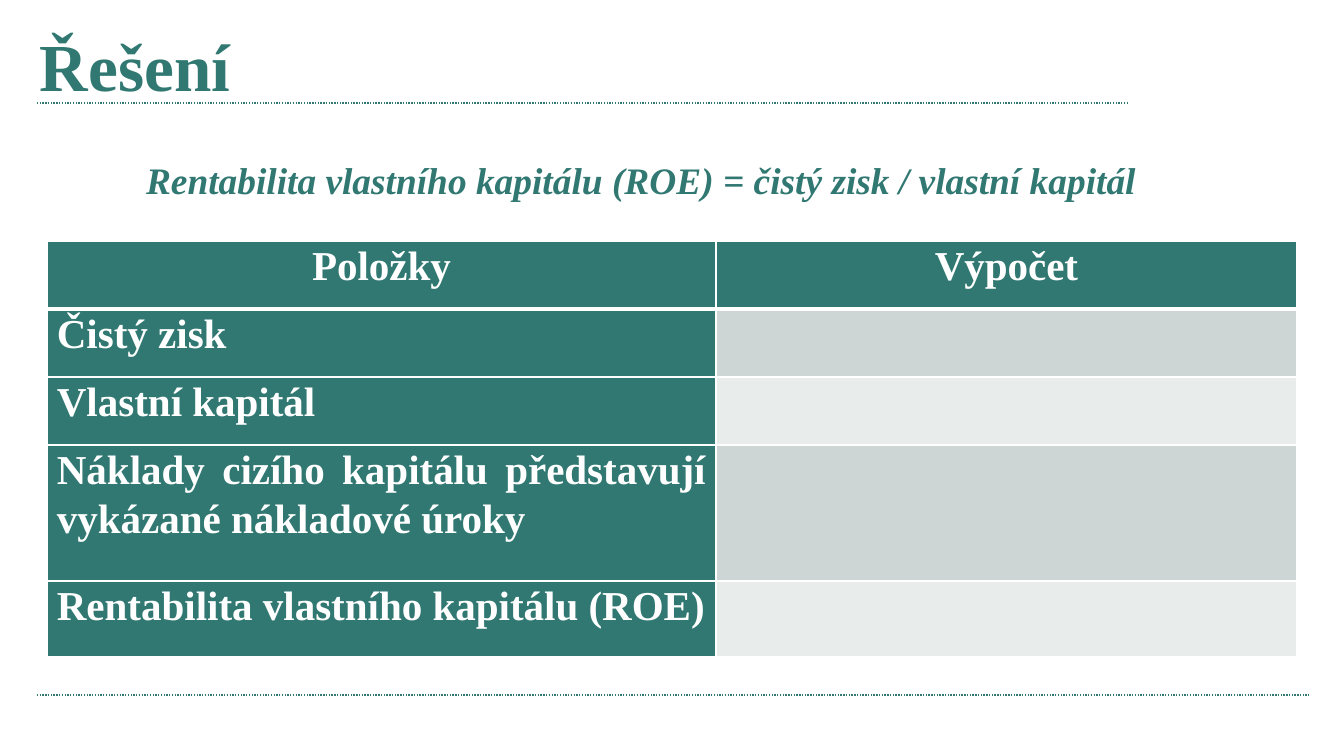
from collections import namedtuple
from dataclasses import dataclass

from lxml.etree import SubElement
from pptx import Presentation
from pptx.dml.color import RGBColor
from pptx.enum.dml import MSO_LINE
from pptx.enum.shapes import MSO_CONNECTOR
from pptx.enum.text import PP_ALIGN
from pptx.oxml.ns import qn
from pptx.util import Emu, Pt

Box = namedtuple("Box", "left top width height")


@dataclass(frozen=True)
class Theme:
    """Colours, font and type sizes of the slide."""
    teal: str = "307871"
    white: str = "FFFFFF"
    bands: tuple = ("CDD6D5", "E8ECEB")
    font: str = "Times New Roman"
    title: int = 36
    formula: int = 20
    table: int = 22
    rule: float = 0.75


THEME = Theme()
HEADER = ("Položky", "Výpočet")
ITEMS = (
    "Čistý zisk",
    "Vlastní kapitál",
    "Náklady cizího kapitálu představují vykázané nákladové úroky",
    "Rentabilita vlastního kapitálu (ROE)",
)
COLUMN_WIDTHS = (669, 581)
ROW_HEIGHTS = (68, 68, 68, 136, 76)


def px(length):
    """Turn pixels into EMU at 134.4 pixels to the inch."""
    return Emu(round(length * 914400 / 134.4))


def write(frame, text, size, color, align, italic=False):
    """Fill a text frame with one bold paragraph."""
    paragraph = frame.paragraphs[0]
    paragraph.text = text
    paragraph.alignment = align
    font = paragraph.font
    font.name, font.size = THEME.font, Pt(size)
    font.bold, font.italic = True, italic
    font.color.rgb = RGBColor.from_string(color)
    return paragraph


def add_rule(slide, box):
    """Draw a dotted horizontal rule along the top of the box."""
    rule = slide.shapes.add_connector(
        MSO_CONNECTOR.STRAIGHT, px(box.left), px(box.top),
        px(box.left + box.width), px(box.top))
    rule.line.color.rgb = RGBColor.from_string(THEME.teal)
    rule.line.width = Pt(THEME.rule)
    rule.line.dash_style = MSO_LINE.ROUND_DOT
    SubElement(rule.element.spPr, qn("a:effectLst"))


def add_text(slide, box, text, size, align, inset_top, italic=False):
    """Place a line of teal text below the top inset of the box."""
    frame = slide.shapes.add_textbox(*map(px, box)).text_frame
    frame.word_wrap = True
    frame.margin_left = frame.margin_right = px(12)
    frame.margin_top = px(inset_top)
    write(frame, text, size, THEME.teal, align, italic)


def set_borders(cell, top, bottom):
    """Give a cell white borders, with top and bottom widths in points."""
    properties = cell._tc.get_or_add_tcPr()
    for side, width in (("L", 1), ("R", 1), ("T", top), ("B", bottom)):
        border = SubElement(properties, qn(f"a:ln{side}"), w=str(Pt(width)))
        fill = SubElement(border, qn("a:solidFill"))
        SubElement(fill, qn("a:srgbClr"), val=THEME.white)


def add_solution_table(slide, box):
    """Build the table of items with an empty calculation column."""
    rows = [HEADER] + [(item, "") for item in ITEMS]
    table = slide.shapes.add_table(
        len(rows), len(HEADER), *map(px, box)).table
    for column, width in zip(table.columns, COLUMN_WIDTHS):
        column.width = px(width)
    for r, (texts, height) in enumerate(zip(rows, ROW_HEIGHTS)):
        table.rows[r].height = px(height)
        for c, text in enumerate(texts):
            cell = table.cell(r, c)
            cell.margin_left = cell.margin_right = px(10)
            cell.margin_top = cell.margin_bottom = 0
            set_borders(cell, 3 if r == 1 else 1, 3 if r == 0 else 1)
            cell.fill.solid()
            color = THEME.teal if text else THEME.bands[(r - 1) % 2]
            cell.fill.fore_color.rgb = RGBColor.from_string(color)
            if text:
                align = PP_ALIGN.JUSTIFY if r else PP_ALIGN.CENTER
                write(cell.text_frame, text, THEME.table, THEME.white,
                      align).line_spacing = 1.07


def main():
    """Build the slide and save it."""
    deck = Presentation()
    deck.slide_width, deck.slide_height = px(1344), px(756)
    slide = deck.slides.add_slide(deck.slide_layouts[6])
    add_rule(slide, Box(37, 103, 1090, 0))
    add_rule(slide, Box(37, 695, 1272, 0))
    add_text(slide, Box(28, 19, 1142, 85), "Řešení",
             THEME.title, PP_ALIGN.LEFT, 5)
    add_text(slide, Box(28, 105, 1227, 185),
             "Rentabilita vlastního kapitálu (ROE) = čistý zisk / vlastní kapitál",
             THEME.formula, PP_ALIGN.CENTER, 52, italic=True)
    add_solution_table(
        slide, Box(47, 241, sum(COLUMN_WIDTHS), sum(ROW_HEIGHTS)))
    deck.save("out.pptx")


if __name__ == "__main__":
    main()
